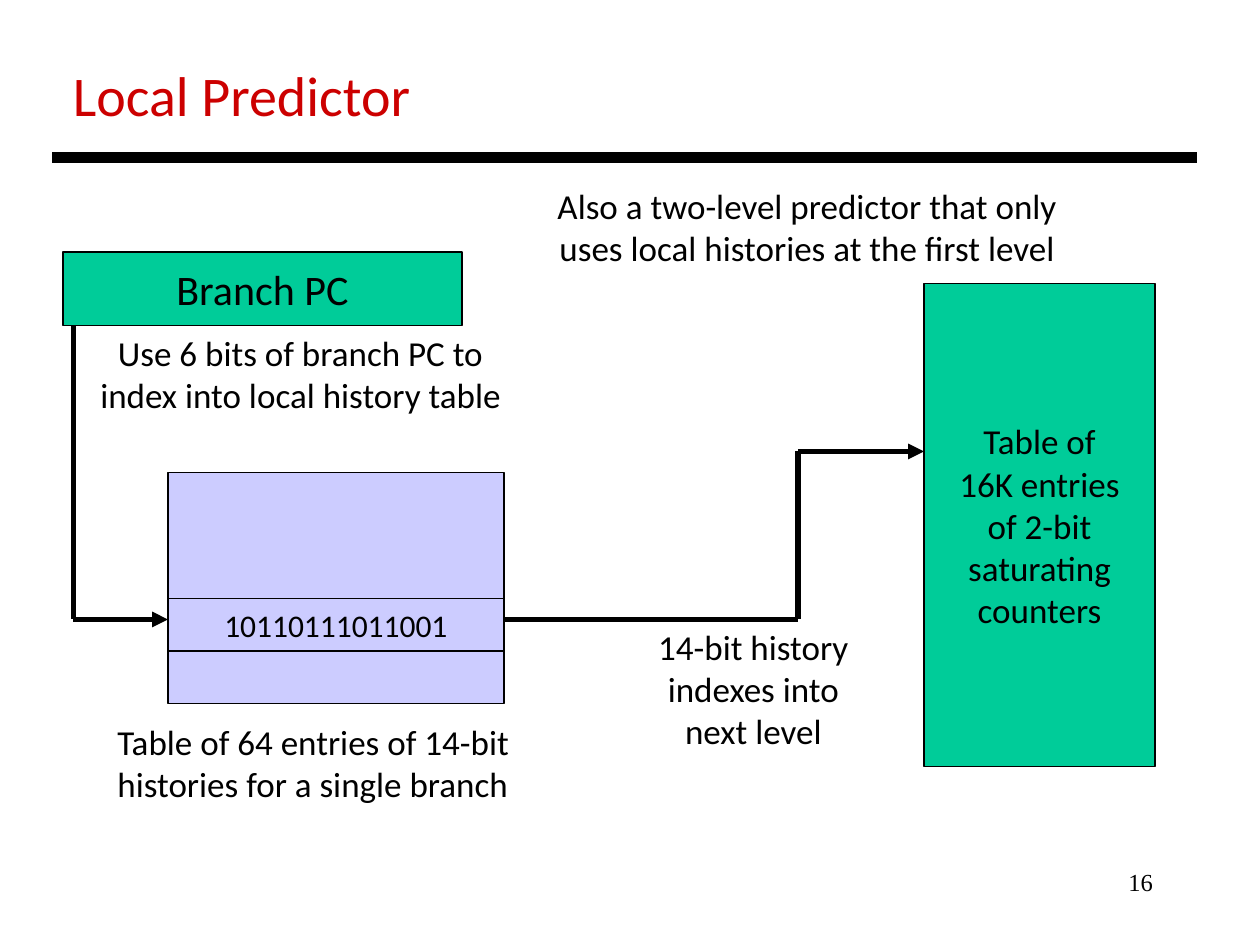
from pptx import Presentation
from pptx.dml.color import RGBColor
from pptx.enum.shapes import MSO_CONNECTOR, MSO_SHAPE
from pptx.enum.text import MSO_ANCHOR, PP_ALIGN as ALIGN
from pptx.oxml.ns import qn
from pptx.util import Pt
from lxml.etree import SubElement

BLACK = RGBColor(0x00, 0x00, 0x00)
RED = RGBColor(0xCC, 0x00, 0x00)
GREEN = RGBColor(0x00, 0xCC, 0x99)
LAVENDER = RGBColor(0xCC, 0xCC, 0xFF)


class Diagram:
    font = "Calibri"
    border = 0.75
    wire = 3

    def __init__(self, slide):
        self.s = slide

    def fill_text(self, tf, lines, size, align, color=BLACK, font=None):
        tf.word_wrap = False
        for i, line in enumerate(lines):
            p = tf.add_paragraph() if i else tf.paragraphs[0]
            p.text = line
            p.alignment = align
            p.font.size = Pt(size)
            p.font.name = font or self.font
            p.font.color.rgb = color

    def text(self, x, y, w, h, *lines, size=20, align=ALIGN.CENTER, **style):
        tb = self.s.shapes.add_textbox(Pt(x), Pt(y), Pt(w), Pt(h))
        self.fill_text(tb.text_frame, lines, size, align, **style)

    def box(self, x, y, w, h, fill, *lines, size=20):
        sp = self.s.shapes.add_shape(MSO_SHAPE.RECTANGLE, Pt(x), Pt(y), Pt(w), Pt(h))
        sp.shadow.inherit = False
        sp.fill.solid()
        sp.fill.fore_color.rgb = fill
        sp.line.color.rgb = BLACK
        sp.line.width = Pt(self.border)
        sp.text_frame.vertical_anchor = MSO_ANCHOR.MIDDLE
        self.fill_text(sp.text_frame, lines, size, ALIGN.CENTER)

    def line(self, start, end, width=None, arrow=False):
        c = self.s.shapes.add_connector(
            MSO_CONNECTOR.STRAIGHT, *(Pt(v) for v in (*start, *end)))
        c.line.color.rgb = BLACK
        c.line.width = Pt(width or self.wire)
        props = c._element.spPr
        if arrow:
            SubElement(props.find(qn("a:ln")), qn("a:tailEnd"), type="triangle")
        SubElement(props, qn("a:effectLst"))

    def route(self, *points):
        """Draw straight segments through the points, with an arrowhead at the last."""
        for i, (start, end) in enumerate(zip(points, points[1:]), 2):
            self.line(start, end, arrow=i == len(points))


def main():
    prs = Presentation()
    prs.slide_width, prs.slide_height = Pt(720), Pt(540)
    d = Diagram(prs.slides.add_slide(prs.slide_layouts[6]))

    d.text(516, 492, 150, 36, "16", size=14, align=ALIGN.RIGHT, font="Times New Roman")
    d.text(34.5, 31, 209.5, 46, "Local Predictor", size=32, align=ALIGN.LEFT, color=RED)
    d.line((30, 90), (684, 90), width=6)

    d.box(36, 144, 228, 42, GREEN, "Branch PC", size=24)
    d.box(528, 162, 132, 276, GREEN,
          "Table of", "16K entries", "of 2-bit", "saturating", "counters")
    d.box(96, 270, 192, 132, LAVENDER)
    d.box(96, 342, 192, 30, LAVENDER, "10110111011001", size=18)

    d.route((42, 186), (42, 354), (96, 354))
    d.route((288, 354), (456, 354), (456, 258), (528, 258))

    d.text(60, 408, 240.5, 55.5, "Table of 64 entries of 14-bit",
           "histories for a single branch", align=ALIGN.LEFT)
    d.text(49, 186, 245.5, 55.5, "Use 6 bits of branch PC to",
           "index into local history table")
    d.text(366, 354, 129, 79, "14-bit history", "indexes into", "next level")
    d.text(310, 102, 302.5, 55.5, "Also a two-level predictor that only",
           "uses local histories at the first level")

    prs.save("out.pptx")


if __name__ == "__main__":
    main()
